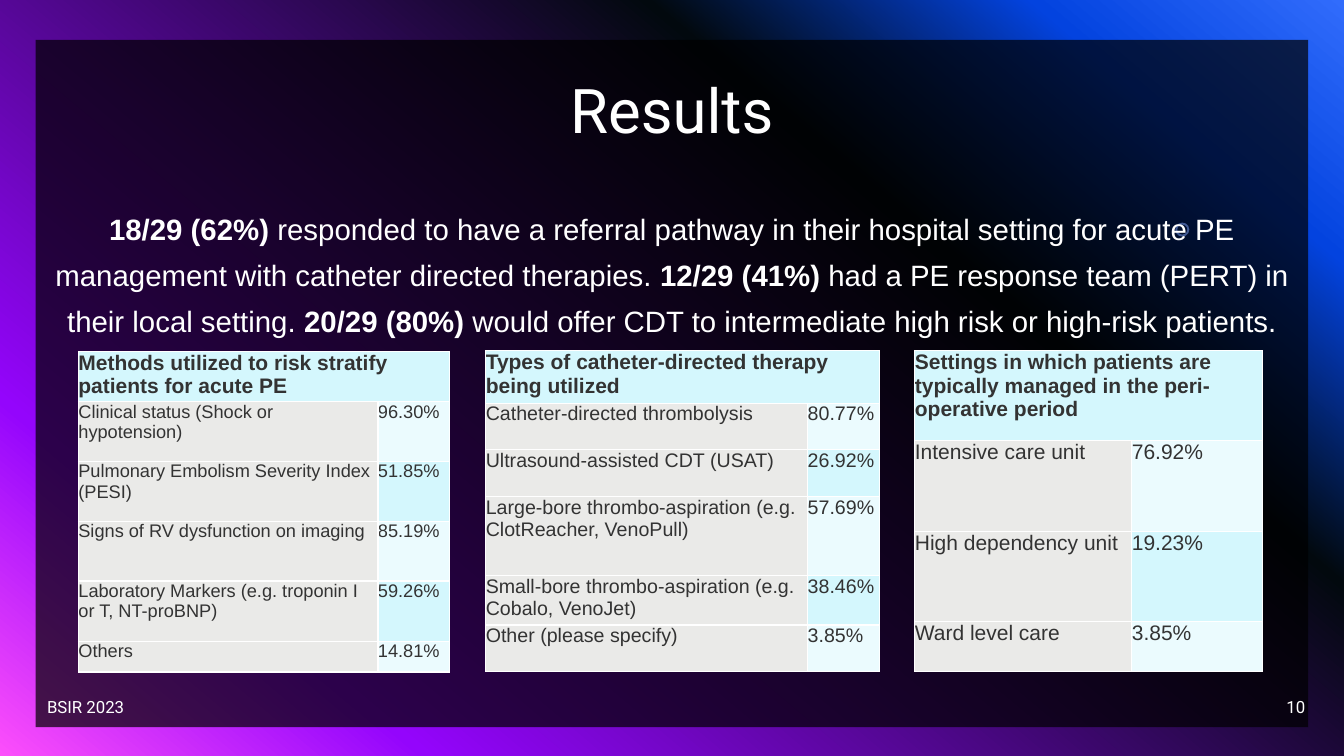
from lxml import etree
from pptx import Presentation
from pptx.dml.color import RGBColor
from pptx.enum.shapes import MSO_SHAPE
from pptx.enum.text import MSO_ANCHOR, PP_ALIGN
from pptx.oxml.ns import qn
from pptx.util import Pt

RECTANGLE, DONUT = MSO_SHAPE.RECTANGLE, MSO_SHAPE.DONUT
LEFT, CENTER, RIGHT = PP_ALIGN.LEFT, PP_ALIGN.CENTER, PP_ALIGN.RIGHT
TOP, MIDDLE = MSO_ANCHOR.TOP, MSO_ANCHOR.MIDDLE

WHITE, INK = "FFFFFF", "333333"
HEADER_FILL, LABEL_FILL = "D4F7FD", "EAEAE8"
VALUE_FILLS = ("EBFBFE", "D4F7FD")
BACKDROP = [(0, "316CFC"), (14, "0343DF"), (31, "02090E"), (81, "9405FC"), (100, "FC4EFB")]
BACKDROP_ANGLE = 130
INSET = 3.6
HEADER_SIZE = 15

TITLE = [("Results", False)]
FOOTER = [("BSIR 2023", False)]
PAGE_NUMBER = [("10", False)]
SUMMARY = [
    ("18/29 (62%) ", True),
    ("responded to have a referral pathway in their hospital setting for acute PE "
     "management with catheter directed therapies. ", False),
    ("12/29 (41%) ", True),
    ("had a PE response team (PERT) in their local setting. ", False),
    ("20/29 (80%) ", True),
    ("would offer CDT to intermediate high risk or high-risk patients.", False),
]

RESULTS = [
    {
        "heading": "Methods utilized to risk stratify patients for acute PE",
        "answers": [
            ("Clinical status (Shock or hypotension)", "96.30%"),
            ("Pulmonary Embolism Severity Index (PESI)", "51.85%"),
            ("Signs of RV dysfunction on imaging", "85.19%"),
            ("Laboratory Markers (e.g. troponin I or T, NT-proBNP)", "59.26%"),
            ("Others", "14.81%"),
        ],
        "left": 56, "top": 251, "size": 13,
        "columns": (214, 51),
        "rows": (29.5, 42.5, 43, 42.5, 43, 22),
    },
    {
        "heading": "Types of catheter-directed therapy being utilized",
        "answers": [
            ("Catheter-directed thrombolysis", "80.77%"),
            ("Ultrasound-assisted CDT (USAT)", "26.92%"),
            ("Large-bore thrombo-aspiration (e.g. ClotReacher, VenoPull)", "57.69%"),
            ("Small-bore thrombo-aspiration (e.g. Cobalo, VenoJet)", "38.46%"),
            ("Other (please specify)", "3.85%"),
        ],
        "left": 347, "top": 250.5, "size": 14,
        "columns": (230, 51),
        "rows": (37.5, 33, 33.5, 56.5, 35.5, 33),
    },
    {
        "heading": "Settings in which patients are typically managed in the peri-operative period",
        "answers": [
            ("Intensive care unit", "76.92%"),
            ("High dependency unit", "19.23%"),
            ("Ward level care", "3.85%"),
        ],
        "left": 653.5, "top": 250.5, "size": 15,
        "columns": (155, 93.5),
        "rows": (64, 65, 64.5, 35.5),
    },
]


def rgb(hex_color):
    return RGBColor.from_string(hex_color)


def paint_backdrop(slide):
    fill = slide.background.fill
    fill.gradient()
    fill.gradient_angle = 360 - BACKDROP_ANGLE
    stops = next(slide.element.iter(qn("a:gsLst")))
    for stop in list(stops):
        stops.remove(stop)
    for percent, color in BACKDROP:
        stop = etree.SubElement(stops, qn("a:gs"), pos=str(percent * 1000))
        etree.SubElement(stop, qn("a:srgbClr"), val=color)


def add_glass(slide, preset, box, color, opacity):
    """Add a borderless, see-through shape; opacity is a percentage."""
    shape = slide.shapes.add_shape(preset, *map(Pt, box))
    shape.shadow.inherit = False
    shape.line.fill.background()
    shape.fill.solid()
    shape.fill.fore_color.rgb = rgb(color)
    solid_color = next(shape.element.spPr.iter(qn("a:srgbClr")))
    etree.SubElement(solid_color, qn("a:alpha"), val=str(opacity * 1000))
    return shape


def write(paragraph, runs, size, font, color):
    for text, bold in runs:
        run = paragraph.add_run()
        run.text = text
        run.font.size = Pt(size)
        run.font.name = font
        run.font.bold = bold
        run.font.color.rgb = rgb(color)


def add_text(slide, box, runs, size, font, align, anchor, spacing=1.0, wrap=True):
    frame = slide.shapes.add_textbox(*map(Pt, box)).text_frame
    frame.word_wrap = wrap
    frame.vertical_anchor = anchor
    frame.margin_left = frame.margin_right = Pt(INSET)
    frame.margin_top = frame.margin_bottom = Pt(INSET)
    paragraph = frame.paragraphs[0]
    paragraph.alignment = align
    paragraph.line_spacing = spacing
    write(paragraph, runs, size, font, WHITE)


def add_borders(cell):
    properties = cell._tc.get_or_add_tcPr()
    for position, side in enumerate(("lnL", "lnR", "lnT", "lnB")):
        border = etree.Element(qn(f"a:{side}"), w=str(Pt(1)))
        solid = etree.SubElement(border, qn("a:solidFill"))
        etree.SubElement(solid, qn("a:srgbClr"), val=WHITE)
        properties.insert(position, border)


def fill_cell(cell, text, size, color, bold=False):
    cell.margin_left = cell.margin_right = cell.margin_top = cell.margin_bottom = 0
    cell.fill.solid()
    cell.fill.fore_color.rgb = rgb(color)
    write(cell.text_frame.paragraphs[0], [(text, bold)], size, "Arial", INK)


def add_result(slide, result):
    columns, rows = result["columns"], result["rows"]
    table = slide.shapes.add_table(
        len(rows), len(columns), Pt(result["left"]), Pt(result["top"]),
        Pt(sum(columns)), Pt(sum(rows))).table
    for column, width in zip(table.columns, columns):
        column.width = Pt(width)
    for row, height in zip(table.rows, rows):
        row.height = Pt(height)
    heading = table.cell(0, 0)
    heading.merge(table.cell(0, 1))
    fill_cell(heading, result["heading"], HEADER_SIZE, HEADER_FILL, bold=True)
    for number, (label, share) in enumerate(result["answers"], start=1):
        value_fill = VALUE_FILLS[(number - 1) % 2]
        fill_cell(table.cell(number, 0), label, result["size"], LABEL_FILL)
        fill_cell(table.cell(number, 1), share, result["size"], value_fill)
    for cell in table.iter_cells():
        add_borders(cell)


def main():
    deck = Presentation()
    deck.slide_width, deck.slide_height = Pt(960), Pt(540)
    slide = deck.slides.add_slide(deck.slide_layouts[6])
    paint_backdrop(slide)
    add_glass(slide, RECTANGLE, (25.5, 28.5, 909, 491), "000000", 70)
    ring = add_glass(slide, DONUT, (839.5, 159, 10, 10), "83A7FD", 49)
    ring.adjustments[0] = 0.14

    add_text(slide, (30, 494.5, 317, 21), FOOTER, 12, "Roboto", LEFT, MIDDLE)
    add_text(slide, (66, 28.5, 828, 104.5), TITLE, 44, "Roboto", CENTER, MIDDLE, 0.9)
    add_text(slide, (32, 140, 896, 95), SUMMARY, 21, "Arial", CENTER, TOP, 1.3)
    add_text(slide, (914.5, 494, 21.5, 21), PAGE_NUMBER, 12, "Roboto", RIGHT, MIDDLE, wrap=False)
    for result in RESULTS:
        add_result(slide, result)
    deck.save("out.pptx")


if __name__ == "__main__":
    main()
